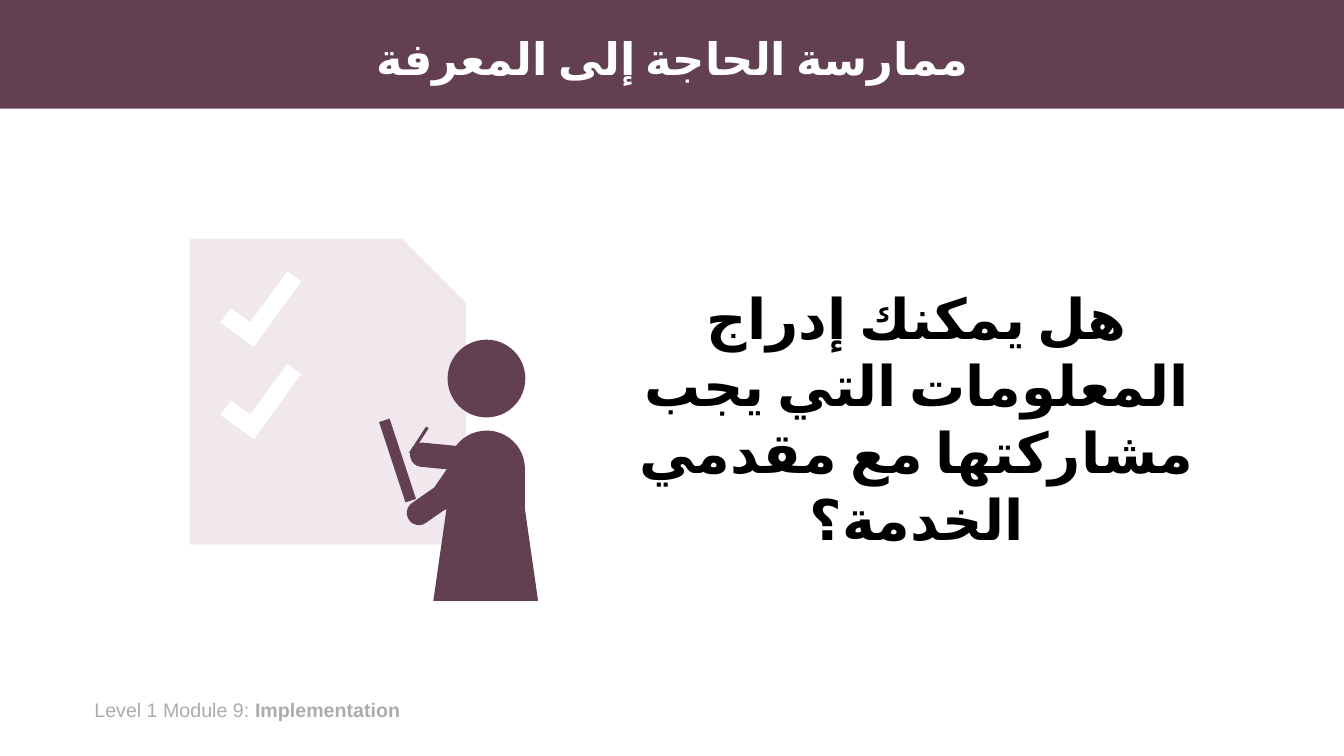
from dataclasses import dataclass

from lxml.etree import SubElement
from pptx import Presentation
from pptx.dml.color import RGBColor
from pptx.enum.shapes import MSO_CONNECTOR, MSO_SHAPE
from pptx.enum.text import MSO_ANCHOR, PP_ALIGN
from pptx.oxml.ns import qn
from pptx.shapes.group import GroupShape
from pptx.slide import Slide
from pptx.text.text import TextFrame
from pptx.util import Cm, Pt


@dataclass(frozen=True)
class Theme:
    plum: RGBColor = RGBColor(0x63, 0x3F, 0x52)
    blush: RGBColor = RGBColor(0xF1, 0xE8, 0xED)
    white: RGBColor = RGBColor(0xFF, 0xFF, 0xFF)
    black: RGBColor = RGBColor(0x00, 0x00, 0x00)
    grey: RGBColor = RGBColor(0xAF, 0xAB, 0xAB)
    arabic_font: str = "Calibri"
    footer_font: str = "Arial"
    title_size: int = 32
    question_size: int = 40
    footer_size: int = 14
    pen_width: float = 2.25


@dataclass(frozen=True)
class Box:
    left: float
    top: float
    width: float
    height: float

    def lengths(self) -> tuple[Cm, Cm, Cm, Cm]:
        return Cm(self.left), Cm(self.top), Cm(self.width), Cm(self.height)


@dataclass(frozen=True)
class Part:
    kind: MSO_SHAPE
    box: Box
    color: RGBColor
    rotation: float = 0
    adjustments: tuple[float, ...] = ()


@dataclass(frozen=True)
class ArabicRun:
    text: str
    language: str


THEME = Theme()
ROUNDED = MSO_SHAPE.ROUND_2_SAME_RECTANGLE
LIMB = (0.49, 0)

BAND = Part(MSO_SHAPE.RECTANGLE, Box(0, 0, 33.87, 2.74), THEME.plum)
CHECKLIST = [
    Part(MSO_SHAPE.SNIP_1_RECTANGLE, Box(4.78, 6.02, 6.96, 7.7), THEME.blush, 0, (0.23,)),
    *(
        Part(MSO_SHAPE.CORNER, Box(5.56, top, 2.03, 1.04), THEME.white, 306, (0.42, 0.43))
        for top in (7.09, 9.42)
    ),
]
PERSON = [
    Part(ROUNDED, Box(11.07, 11.46, 0.61, 1.47), THEME.plum, 214.3, LIMB),
    Part(ROUNDED, Box(10.41, 12.32, 0.61, 0.99), THEME.plum, 235, LIMB),
    Part(MSO_SHAPE.RECTANGLE, Box(9.88, 10.54, 0.28, 2.13), THEME.plum, 341.8),
    Part(ROUNDED, Box(10.87, 10.67, 0.61, 1.68), THEME.plum, 275.6, LIMB),
    Part(MSO_SHAPE.FLOWCHART_MANUAL_OPERATION, Box(10.92, 11.46, 2.64, 3.68), THEME.plum, 180),
    Part(ROUNDED, Box(11.3, 10.85, 1.93, 4.24), THEME.plum, 0, (0.5, 0)),
    Part(MSO_SHAPE.OVAL, Box(11.28, 8.56, 1.96, 1.96), THEME.plum),
]
TITLE = [ArabicRun("ممارسة الحاجة إلى المعرفة", "ar-SA")]
QUESTION = [
    ArabicRun("هل يمكنك ", "ar-SA"),
    ArabicRun("إدراج المعلومات التي يجب مشاركتها مع مقدمي الخدمة؟", "en-US"),
]


def draw_part(owner: Slide | GroupShape, part: Part) -> None:
    shape = owner.shapes.add_shape(part.kind, *part.box.lengths())
    shape.shadow.inherit = False
    shape.fill.solid()
    shape.fill.fore_color.rgb = part.color
    shape.line.fill.background()
    shape.rotation = part.rotation
    for index, value in enumerate(part.adjustments):
        shape.adjustments[index] = value


def draw_group(slide: Slide, parts: list[Part]) -> GroupShape:
    group = slide.shapes.add_group_shape()
    for part in parts:
        draw_part(group, part)
    return group


def draw_pen(group: GroupShape) -> None:
    pen = group.shapes.add_connector(
        MSO_CONNECTOR.STRAIGHT, Cm(10.77), Cm(10.77), Cm(10.34), Cm(11.43)
    )
    pen.line.color.rgb = THEME.plum
    pen.line.width = Pt(THEME.pen_width)
    SubElement(pen._element.spPr, qn("a:effectLst"))


def add_text_frame(slide: Slide, box: Box) -> TextFrame:
    frame = slide.shapes.add_textbox(*box.lengths()).text_frame
    frame.word_wrap = True
    return frame


def draw_arabic(
    slide: Slide, box: Box, runs: list[ArabicRun], size: int, color: RGBColor, spacing: float
) -> None:
    frame = add_text_frame(slide, box)
    frame.vertical_anchor = MSO_ANCHOR.MIDDLE
    paragraph = frame.paragraphs[0]
    paragraph.alignment = PP_ALIGN.CENTER
    paragraph.line_spacing = spacing
    paragraph._p.get_or_add_pPr().set("rtl", "1")
    paragraph.font.size = Pt(size)
    paragraph.font.bold = True
    paragraph.font.name = THEME.arabic_font
    paragraph.font.color.rgb = color
    for arabic_run in runs:
        run = paragraph.add_run()
        run.text = arabic_run.text
        properties = run._r.get_or_add_rPr()
        properties.set("lang", arabic_run.language)
        SubElement(properties, qn("a:cs")).set("typeface", THEME.arabic_font)


def draw_footer(slide: Slide) -> None:
    paragraph = add_text_frame(slide, Box(2.13, 17.45, 11.56, 0.86)).paragraphs[0]
    paragraph.font.size = Pt(THEME.footer_size)
    paragraph.font.name = THEME.footer_font
    paragraph.font.color.rgb = THEME.grey
    paragraph.add_run().text = "Level 1 Module 9: "
    module = paragraph.add_run()
    module.text = "Implementation"
    module.font.bold = True


def main() -> None:
    presentation = Presentation()
    presentation.slide_width = Cm(33.87)
    presentation.slide_height = Cm(19.05)
    slide = presentation.slides.add_slide(presentation.slide_layouts[6])
    draw_part(slide, BAND)
    draw_footer(slide)
    draw_arabic(slide, Box(2.34, 0.33, 29.21, 2.41), TITLE, THEME.title_size, THEME.white, 0.9)
    draw_arabic(
        slide, Box(15.11, 4.19, 15.98, 12.67), QUESTION, THEME.question_size, THEME.black, 1
    )
    draw_group(slide, CHECKLIST)
    draw_pen(draw_group(slide, PERSON))
    presentation.save("out.pptx")


if __name__ == "__main__":
    main()
